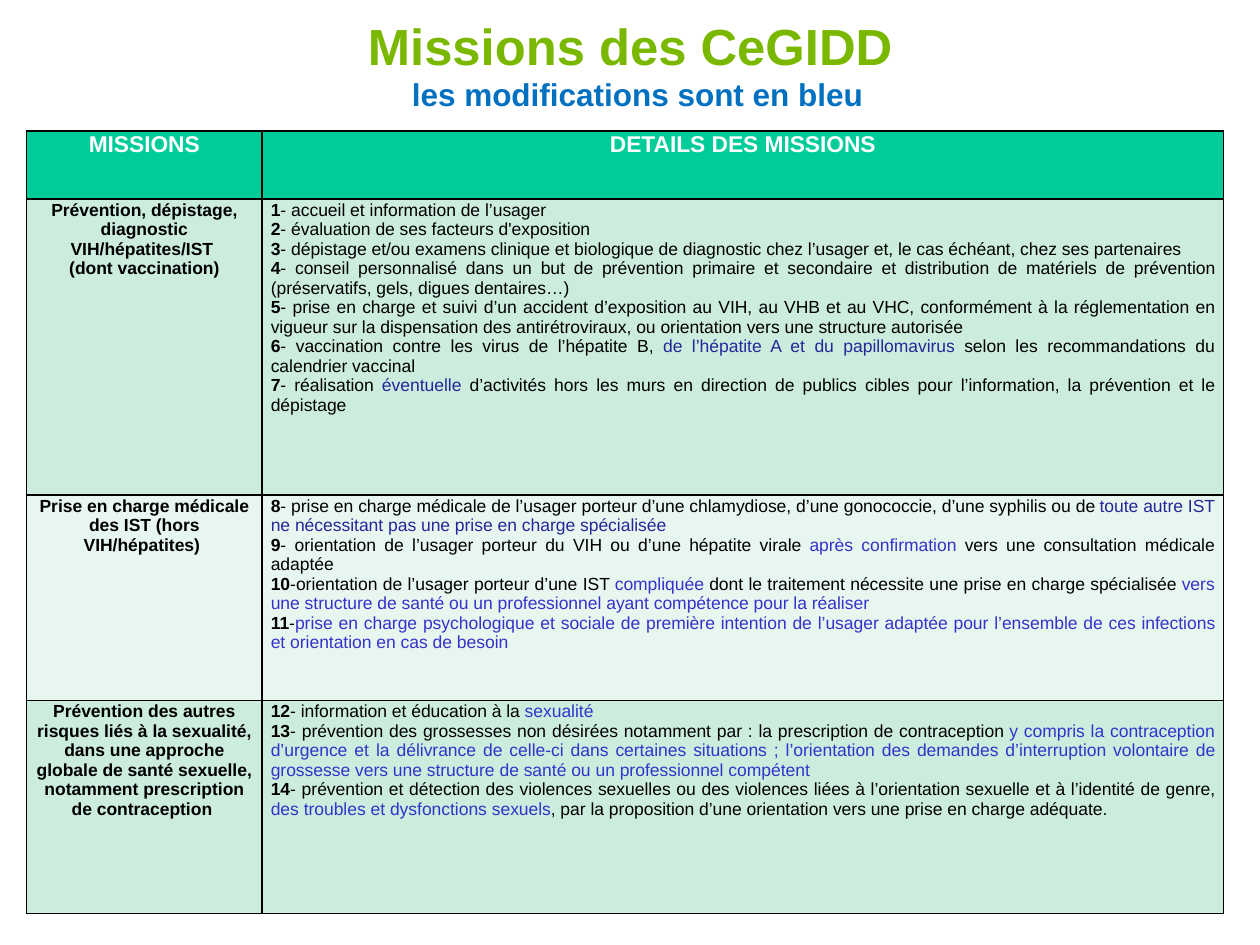
from dataclasses import dataclass

from lxml import etree
from pptx import Presentation
from pptx.dml.color import RGBColor
from pptx.enum import text as t
from pptx.oxml import ns
from pptx.util import Inches, Pt

GREEN = RGBColor(0x7A, 0xB8, 0x00)
AZURE = RGBColor(0x00, 0x70, 0xC0)
TEAL = RGBColor(0x00, 0xCC, 0x99)
MINT = RGBColor(0xCC, 0xEC, 0xDE)
PALE = RGBColor(0xE7, 0xF6, 0xEF)
NAVY = RGBColor(0x26, 0x26, 0x99)
BLUE = RGBColor(0x33, 0x33, 0xCC)
WHITE = RGBColor(0xFF, 0xFF, 0xFF)
BLACK = RGBColor(0x00, 0x00, 0x00)

MID = t.PP_ALIGN.CENTER
JUST = t.PP_ALIGN.JUSTIFY


@dataclass
class Item:
    """A numbered detail; text between bars is a change, shown in ink."""
    num: int
    words: str
    ink: RGBColor = BLUE


@dataclass
class Mission:
    names: list[str]
    items: list[Item]
    high: float
    fill: RGBColor


MISSIONS = [
    Mission(
        ["Prévention, dépistage, diagnostic VIH/hépatites/IST ", "(dont vaccination)"],
        [
            Item(1, "- accueil et information de l’usager"),
            Item(2, "- évaluation de ses facteurs d'exposition "),
            Item(3, "- dépistage et/ou examens clinique et biologique de diagnostic chez "
                    "l’usager et, le cas échéant, chez ses partenaires "),
            Item(4, "- conseil personnalisé dans un but de prévention primaire et secondaire "
                    "et distribution de matériels de prévention (préservatifs, gels, digues "
                    "dentaires…) "),
            Item(5, "- prise en charge et suivi d’un accident d’exposition au VIH, au VHB et "
                    "au VHC, conformément à la réglementation en vigueur sur la dispensation "
                    "des antirétroviraux, ou orientation vers une structure autorisée"),
            Item(6, "- vaccination contre les virus de l’hépatite B, |de l’hépatite A et du "
                    "papillomavirus |selon les recommandations du calendrier vaccinal", NAVY),
            Item(7, "- réalisation |éventuelle |d’activités hors les murs en direction de "
                    "publics cibles pour l’information, la prévention et le dépistage ", NAVY),
        ], 2.35, MINT),
    Mission(
        ["Prise en charge médicale des IST (hors VIH/hépatites) "],
        [
            Item(8, "- prise en charge médicale de l’usager porteur d’une chlamydiose, d’une "
                    "gonococcie, d’une syphilis ou de |toute autre IST ne nécessitant pas une "
                    "prise en charge spécialisée", NAVY),
            Item(9, "- orientation de l’usager porteur du VIH ou d’une hépatite virale |après "
                    "confirmation |vers une consultation médicale adaptée"),
            Item(10, "-orientation de l’usager porteur d’une IST |compliquée| dont le "
                     "traitement nécessite une prise en charge spécialisée |vers une structure "
                     "de santé ou un professionnel ayant compétence pour la réaliser"),
            Item(11, "-|prise en charge psychologique et sociale de première intention de "
                     "l’usager adaptée pour l’ensemble de ces infections et orientation en cas "
                     "de besoin"),
        ], 1.63, PALE),
    Mission(
        ["Prévention des autres risques liés à la sexualité, dans une approche globale de "
         "santé sexuelle, notamment prescription de contraception "],
        [
            Item(12, "- information et éducation à la |sexualité"),
            Item(13, "- prévention des grossesses non désirées notamment par : la prescription "
                     "de contraception |y compris la contraception d’urgence et la délivrance "
                     "de celle-ci dans certaines situations ; l’orientation des demandes "
                     "d’interruption volontaire de grossesse vers une structure de santé ou un "
                     "professionnel compétent "),
            Item(14, "- prévention et détection des violences sexuelles ou des violences liées "
                     "à l’orientation sexuelle et à l’identité de genre, |des troubles et "
                     "dysfonctions sexuels|, par la proposition d’une orientation vers une "
                     "prise en charge adéquate."),
        ], 1.69, MINT),
]


def put(para, words: str, size: float, ink: RGBColor, bold: bool = True) -> None:
    run = para.add_run()
    run.text = words
    for key, val in {"name": "Arial", "size": Pt(size), "bold": bold}.items():
        setattr(run.font, key, val)
    run.font.color.rgb = ink


def line(frame, first: bool, align):
    """Return the next paragraph of the frame, aligned."""
    para = frame.paragraphs[0] if first else frame.add_paragraph()
    para.alignment = align
    return para


def dress(cell, fill: RGBColor) -> None:
    """Set margins, black borders and fill."""
    margins = {"margin_left": 0.07, "margin_right": 0.07,
               "margin_top": 0.01, "margin_bottom": 0}
    for key, val in margins.items():
        setattr(cell, key, Inches(val))
    props = cell._tc.get_or_add_tcPr()
    for side in ("lnL", "lnR", "lnT", "lnB"):
        edge = etree.SubElement(props, ns.qn(f"a:{side}"), w=str(Pt(1)))
        solid = etree.SubElement(edge, ns.qn("a:solidFill"))
        etree.SubElement(solid, ns.qn("a:srgbClr"), val=str(BLACK))
    cell.fill.solid()
    cell.fill.fore_color.rgb = fill


def draw_title(slide) -> None:
    box = slide.shapes.add_textbox(Inches(0.79), Inches(0.18), Inches(8.54), Inches(0.68))
    frame = box.text_frame
    form = {"word_wrap": True, "vertical_anchor": t.MSO_ANCHOR.MIDDLE,
            "margin_top": Inches(0.02), "margin_bottom": Inches(0.05)}
    for key, val in form.items():
        setattr(frame, key, val)
    para = line(frame, True, MID)
    put(para, "Missions des CeGIDD ", 29, GREEN)
    para.add_line_break()
    put(para, "les modifications sont en bleu", 18, AZURE)


def draw_row(row, plan: Mission) -> None:
    row.height = Inches(plan.high)
    left, right = row.cells
    for cell in (left, right):
        dress(cell, plan.fill)
    for i, name in enumerate(plan.names):
        put(line(left.text_frame, i == 0, MID), name, 10, BLACK)
    for i, item in enumerate(plan.items):
        para = line(right.text_frame, i == 0, JUST)
        put(para, str(item.num), 10, BLACK)
        for j, part in enumerate(item.words.split("|")):
            put(para, part, 10, item.ink if j % 2 else BLACK, False)


def draw_table(slide) -> None:
    grid = slide.shapes.add_table(len(MISSIONS) + 1, 2, Inches(0.21), Inches(1.04),
                                  Inches(9.5), Inches(6.21)).table
    for col, wide in zip(grid.columns, (1.87, 7.63)):
        col.width = Inches(wide)
    head, *body = grid.rows
    head.height = Inches(0.54)
    for cell, label in zip(head.cells, ("MISSIONS", "DETAILS DES MISSIONS")):
        dress(cell, TEAL)
        para = line(cell.text_frame, True, MID)
        para.space_after = Pt(6)
        put(para, label, 13, WHITE)
    for row, plan in zip(body, MISSIONS):
        draw_row(row, plan)


def main() -> None:
    deck = Presentation()
    deck.slide_width, deck.slide_height = Inches(10), Inches(7.5)
    slide = deck.slides.add_slide(deck.slide_layouts[6])
    draw_title(slide)
    draw_table(slide)
    deck.save("out.pptx")


if __name__ == "__main__":
    main()
